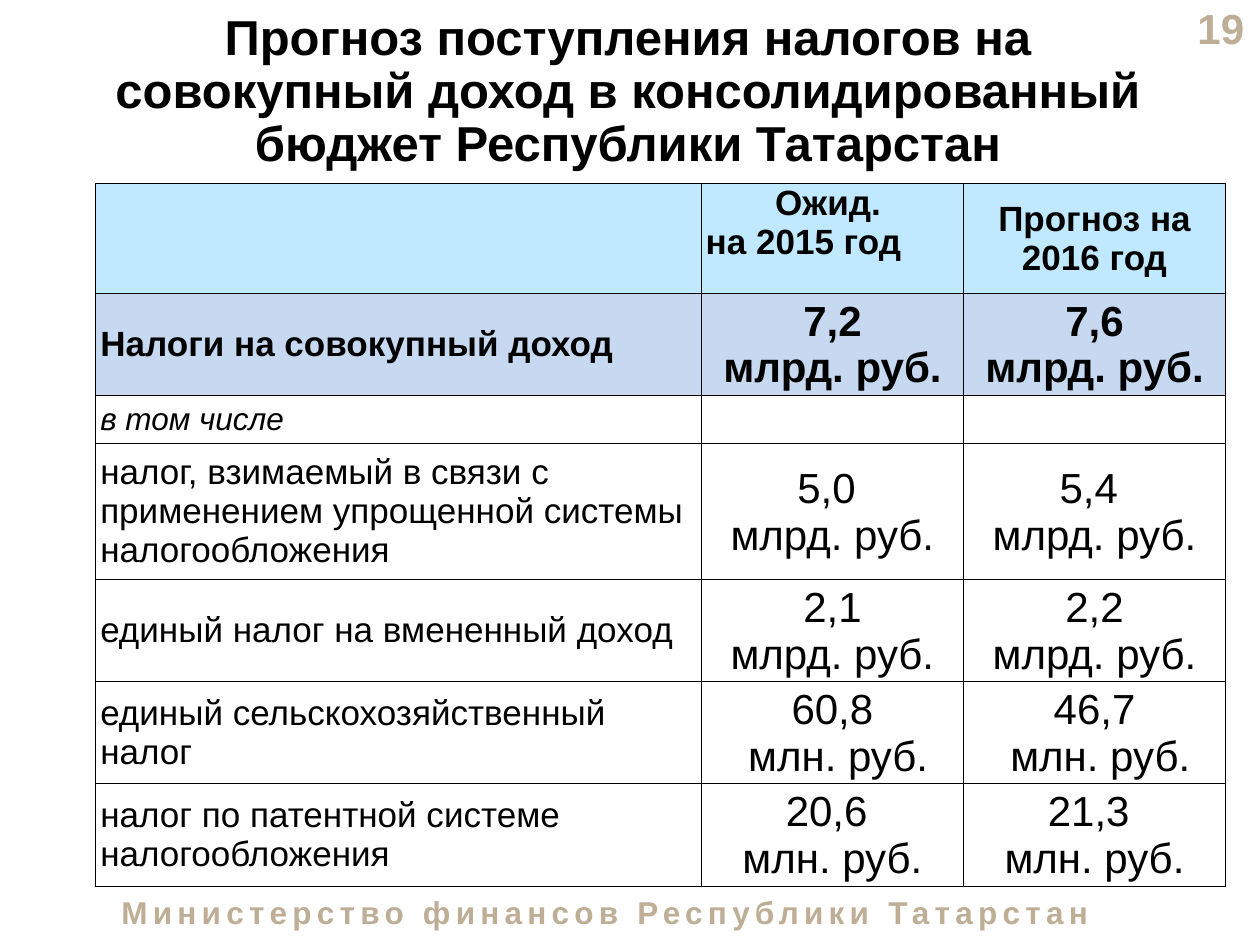
from pptx import Presentation
from pptx.util import Pt
from pptx.dml.color import RGBColor
from pptx.enum.text import PP_ALIGN as AL, MSO_ANCHOR as AN
from pptx.oxml import parse_xml
from pptx.oxml.ns import nsdecls


def style(tf, size, color, align, bold=False, italic=False):
    for p in tf.paragraphs:
        p.alignment = align
        for r in p.runs:
            f = r.font
            f.name, f.size, f.bold, f.italic = "Arial", Pt(size), bold, italic
            f.color.rgb = RGBColor.from_string(color)


prs = Presentation()
prs.slide_width, prs.slide_height = Pt(720), Pt(540)
s = prs.slides.add_slide(prs.slide_layouts[6])

texts = [
    ("19", (672, 3.6, 46, 24.5), 24, "BFAE96", AL.RIGHT, AN.MIDDLE),
    ("Министерство финансов Республики Татарстан", (40.3, 507, 611, 29), 18, "BFAE96", AL.CENTER, AN.TOP),
    ("Прогноз поступления налогов на совокупный доход в консолидированный бюджет Республики Татарстан",
     (40.3, 2.2, 637, 101), 28, "000000", AL.CENTER, AN.MIDDLE),
]
boxes = []
for text, at, size, color, align, anchor in texts:
    sp = s.shapes.add_textbox(*map(Pt, at))
    tf = sp.text_frame
    tf.word_wrap, tf.vertical_anchor, tf.text = True, anchor, text
    style(tf, size, color, align, bold=True)
    boxes.append(tf)
number, footer, title = boxes
footer.paragraphs[0].runs[0].font._element.set("spc", "300")
title.paragraphs[0].line_spacing = 0.9

rows = [
    ("", "Ожид.\nна 2015 год", "Прогноз на 2016 год"),
    ("Налоги на совокупный доход", "7,2\vмлрд. руб.", "7,6\vмлрд. руб."),
    ("в том числе", "", ""),
    ("налог, взимаемый в связи с применением упрощенной системы налогообложения",
     "5,0 \vмлрд. руб.", "5,4 \vмлрд. руб."),
    ("единый налог на вмененный доход", "2,1\vмлрд. руб.", "2,2\vмлрд. руб."),
    ("единый сельскохозяйственный налог", "60,8\v млн. руб.", "46,7\v млн. руб."),
    ("налог по патентной системе налогообложения", "20,6 \vмлн. руб.", "21,3 \vмлн. руб."),
]
heights = [63, 58.3, 27.5, 77, 58.3, 58.3, 58.6]
widths = [346.4, 149.8, 149.8]
fills = {0: "C0E9FF", 1: "C6D9F1"}

tbl = s.shapes.add_table(len(rows), len(widths), Pt(54.4), Pt(104.6), Pt(sum(widths)), Pt(sum(heights))).table
tbl.first_row = tbl.horz_banding = False
for col, width in zip(tbl.columns, widths):
    col.width = Pt(width)
for i, (row, height) in enumerate(zip(rows, heights)):
    tbl.rows[i].height = Pt(height)
    for j, text in enumerate(row):
        cell = tbl.cell(i, j)
        cell.text_frame.text = text
        cell.vertical_anchor = AN.MIDDLE
        inset = 0.7 if j or not text else 2.9
        cell.margin_left = cell.margin_right = cell.margin_top = Pt(inset)
        cell.margin_bottom = Pt(0 if inset < 1 else inset)
        size = 18 if i == 2 else 24 if i and j else 20
        style(cell.text_frame, size, "000000", AL.CENTER if j else AL.LEFT, bold=i < 2, italic=i == 2)
        for side in ("lnL", "lnR", "lnT", "lnB"):
            cell._tc.get_or_add_tcPr().append(parse_xml(
                f'<a:{side} {nsdecls("a")} w="6350"><a:solidFill><a:srgbClr val="000000"/></a:solidFill></a:{side}>'))
        if i in fills:
            cell.fill.solid()
            cell.fill.fore_color.rgb = RGBColor.from_string(fills[i])
        else:
            cell.fill.background()

expected = tbl.cell(0, 1)
expected.vertical_anchor = AN.TOP
expected.margin_left, expected.margin_right = Pt(2.5), Pt(7.5)
expected.text_frame.paragraphs[1].alignment = AL.LEFT

prs.save("out.pptx")
